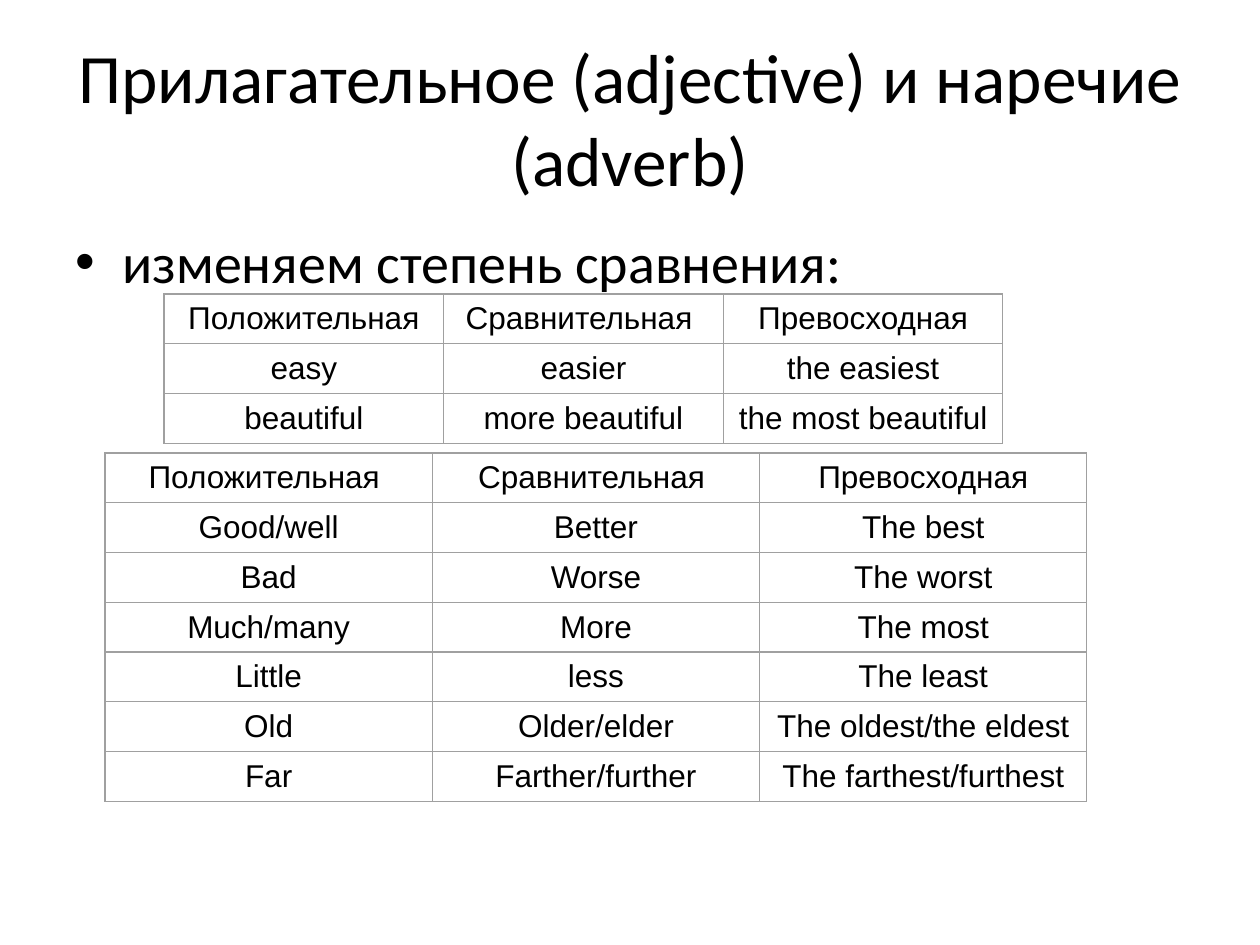
import lxml.etree
import pptx
import pptx.dml.color
import pptx.enum.text
import pptx.oxml.ns
import pptx.util

PX = 914400 / 126
BLACK = pptx.dml.color.RGBColor(0x00, 0x00, 0x00)
BORDER_GRAY = pptx.dml.color.RGBColor(0xA0, 0xA0, 0xA0)
CENTER = pptx.enum.text.PP_ALIGN.CENTER
MIDDLE = pptx.enum.text.MSO_ANCHOR.MIDDLE

TITLE_FONT = {"name": "Calibri", "size": pptx.util.Pt(39.6)}
BULLET_FONT = {"name": "Calibri", "size": pptx.util.Pt(32)}
TABLE_FONT = {"name": "Arial", "size": pptx.util.Pt(18)}
CELL_FORMAT = {
    "vertical_anchor": MIDDLE,
    **{f"margin_{side}": round(6 * PX) for side in ("left", "right", "top", "bottom")},
}

REGULAR_ROWS = [
    ["Положительная", "Сравнительная ", "Превосходная"],
    ["easy", "easier", "the easiest"],
    ["beautiful", "more beautiful", "the most beautiful"],
]
IRREGULAR_ROWS = [
    ["Положительная ", "Сравнительная ", "Превосходная"],
    ["Good/well", "Better", "The best"],
    ["Bad", "Worse", "The worst"],
    ["Much/many", "More", "The most"],
    ["Little", "less", "The least"],
    ["Old", "Older/elder", "The oldest/the eldest"],
    ["Far", "Farther/further", "The farthest/furthest"],
]


def emu(*lengths):
    return [round(length * PX) for length in lengths]


def apply_format(target, values):
    for name, value in values.items():
        setattr(target, name, value)


def write_text(paragraph, text, font):
    run = paragraph.add_run()
    run.text = text
    apply_format(run.font, font)
    run.font.color.rgb = BLACK


def add_child(parent, tag, **attributes):
    return lxml.etree.SubElement(parent, pptx.oxml.ns.qn(tag), attributes)


def add_title(slide, box, text):
    frame = slide.shapes.add_textbox(*emu(*box)).text_frame
    apply_format(frame, {"word_wrap": True, "vertical_anchor": MIDDLE})
    paragraph = frame.paragraphs[0]
    paragraph.alignment = CENTER
    write_text(paragraph, text, TITLE_FONT)


def add_bullet(slide, box, text):
    frame = slide.shapes.add_textbox(*emu(*box)).text_frame
    frame.word_wrap = True
    paragraph = frame.paragraphs[0]
    paragraph.space_before = pptx.util.Pt(6.4)
    write_text(paragraph, text, BULLET_FONT)
    properties = paragraph._p.get_or_add_pPr()
    indent = emu(47)[0]
    properties.set("marL", str(indent))
    properties.set("indent", str(-indent))
    add_child(properties, "a:buFont", typeface="Arial")
    add_child(properties, "a:buChar", char="•")


def add_borders(cell):
    properties = cell._tc.get_or_add_tcPr()
    for position, tag in enumerate(("a:lnL", "a:lnR", "a:lnT", "a:lnB")):
        line = lxml.etree.Element(
            pptx.oxml.ns.qn(tag), {"w": str(pptx.util.Pt(0.75))}
        )
        fill = add_child(line, "a:solidFill")
        add_child(fill, "a:srgbClr", val=str(BORDER_GRAY))
        properties.insert(position, line)


def add_comparison_table(slide, box, rows):
    shape = slide.shapes.add_table(len(rows), len(rows[0]), *emu(*box))
    table = shape.table
    apply_format(table, {"first_row": False, "horz_banding": False})
    for row_index, row in enumerate(rows):
        for column_index, text in enumerate(row):
            cell = table.cell(row_index, column_index)
            apply_format(cell, CELL_FORMAT)
            cell.fill.background()
            add_borders(cell)
            paragraph = cell.text_frame.paragraphs[0]
            paragraph.alignment = CENTER
            write_text(paragraph, text, TABLE_FONT)


def main():
    presentation = pptx.Presentation()
    presentation.slide_width, presentation.slide_height = emu(1260, 945)
    slide = presentation.slides.add_slide(presentation.slide_layouts[6])
    add_title(slide, (63, 38, 1134, 158), "Прилагательное (adjective) и наречие (adverb)")
    add_bullet(slide, (63, 221, 1134, 624), "изменяем степень сравнения:")
    add_comparison_table(slide, (164, 294, 839, 145), REGULAR_ROWS)
    add_comparison_table(slide, (105, 453, 982, 339), IRREGULAR_ROWS)
    presentation.save("out.pptx")


if __name__ == "__main__":
    main()
